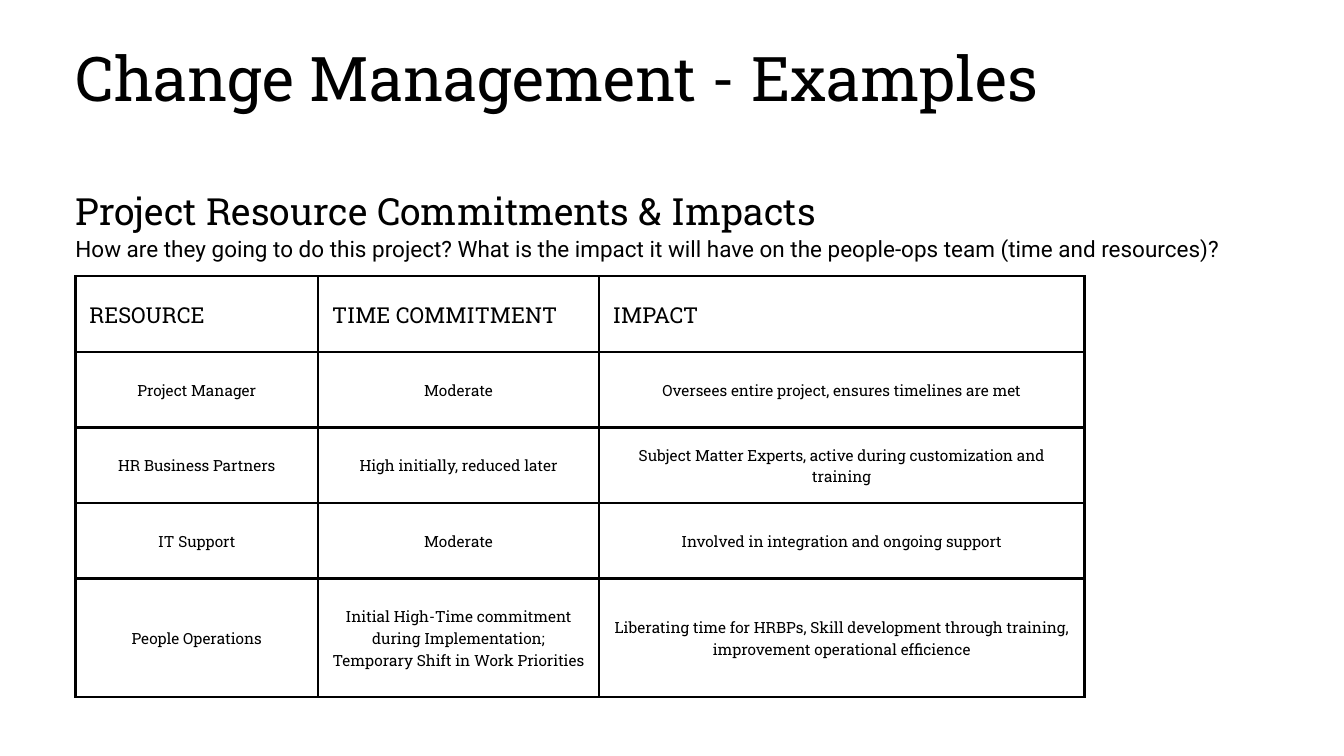
from dataclasses import dataclass

from lxml.etree import SubElement
from pptx import Presentation
from pptx.dml.color import RGBColor
from pptx.enum.text import MSO_ANCHOR as Anchor, PP_ALIGN as Align
from pptx.oxml.ns import qn
from pptx.util import Pt


@dataclass(frozen=True)
class Theme:
    ink: str = "000000"
    paper: str = "FFFFFF"
    slab: str = "Roboto Slab"
    sans: str = "Roboto"
    # (type size, line spacing)
    title: tuple = (66, 85.5)
    subtitle: tuple = (40.1, 52)
    question: tuple = (24.1, 31.2)
    header: tuple = (23.5, 32.9)
    body: tuple = (16.5, 23.1)
    border: float = 3


theme = Theme()


def style(paragraph, scale, font_name, align=Align.LEFT):
    size, leading = scale
    paragraph.alignment = align
    paragraph.line_spacing = Pt(leading)
    paragraph.space_before = paragraph.space_after = Pt(0)
    for run in paragraph.runs:
        run.font.size = Pt(size)
        run.font.name = font_name
        run.font.color.rgb = RGBColor.from_string(theme.ink)


def set_frame(frame, inset, anchor):
    frame.margin_left = frame.margin_right = Pt(inset)
    frame.margin_top = frame.margin_bottom = Pt(inset)
    frame.vertical_anchor = anchor
    frame.word_wrap = True


prs = Presentation()
prs.slide_width, prs.slide_height = Pt(1440), Pt(810)
slide = prs.slides.add_slide(prs.slide_layouts[5])
slide.background.fill.solid()
slide.background.fill.fore_color.rgb = RGBColor.from_string(theme.paper)

left_edge = 80.8

# Title
title = slide.shapes.title
title.left, title.top, title.width, title.height = Pt(left_edge), Pt(36.7), Pt(1227.6), Pt(83.5)
title.text_frame.text = "Change Management - Examples"
set_frame(title.text_frame, 0, Anchor.TOP)
style(title.text_frame.paragraphs[0], theme.title, theme.slab)

# Subtitle and guiding question
intro = slide.shapes.add_textbox(Pt(left_edge), Pt(197.3), Pt(1278), Pt(81.4)).text_frame
set_frame(intro, 0, Anchor.TOP)
subtitle = intro.paragraphs[0]
subtitle.text = "Project Resource Commitments & Impacts"
style(subtitle, theme.subtitle, theme.slab)
question = intro.add_paragraph()
question.text = ("How are they going to do this project? What is the impact it will have "
                 "on the people-ops team (time and resources)?")
style(question, theme.question, theme.sans)

# Resource table
resources = [
    ("RESOURCE", "TIME COMMITMENT", "IMPACT"),
    ("Project Manager", "Moderate", "Oversees entire project, ensures timelines are met"),
    ("HR Business Partners", "High initially, reduced later",
     "Subject Matter Experts, active during customization and training"),
    ("IT Support", "Moderate", "Involved in integration and ongoing support"),
    ("People Operations",
     "Initial High-Time commitment during Implementation; Temporary Shift in Work Priorities",
     "Liberating time for HRBPs, Skill development through training, "
     "improvement operational efficience"),
]
column_widths = [260, 301, 520]
row_heights = [81, 81, 81, 81, 127]

table = slide.shapes.add_table(
    len(row_heights), len(column_widths), Pt(left_edge), Pt(296),
    Pt(sum(column_widths)), Pt(sum(row_heights))).table
for column, width in zip(table.columns, column_widths):
    column.width = Pt(width)
for row, height in zip(table.rows, row_heights):
    row.height = Pt(height)

for row_index, entries in enumerate(resources):
    for column_index, entry in enumerate(entries):
        cell = table.cell(row_index, column_index)
        cell.text_frame.text = entry
        cell.margin_left = cell.margin_right = Pt(15)
        cell.margin_top = cell.margin_bottom = Pt(15)
        cell.vertical_anchor = Anchor.MIDDLE
        paragraph = cell.text_frame.paragraphs[0]
        if row_index == 0:
            style(paragraph, theme.header, theme.slab)
            paragraph.runs[0].font.bold = False
        else:
            style(paragraph, theme.body, theme.slab, Align.CENTER)

        # Borders must come before the fill in the cell properties
        properties = cell._tc.get_or_add_tcPr()
        for side in ("a:lnL", "a:lnR", "a:lnT", "a:lnB"):
            border = SubElement(properties, qn(side), w=str(Pt(theme.border)))
            border_fill = SubElement(border, qn("a:solidFill"))
            SubElement(border_fill, qn("a:srgbClr"), val=theme.ink)
        cell.fill.background()

prs.save("out.pptx")
